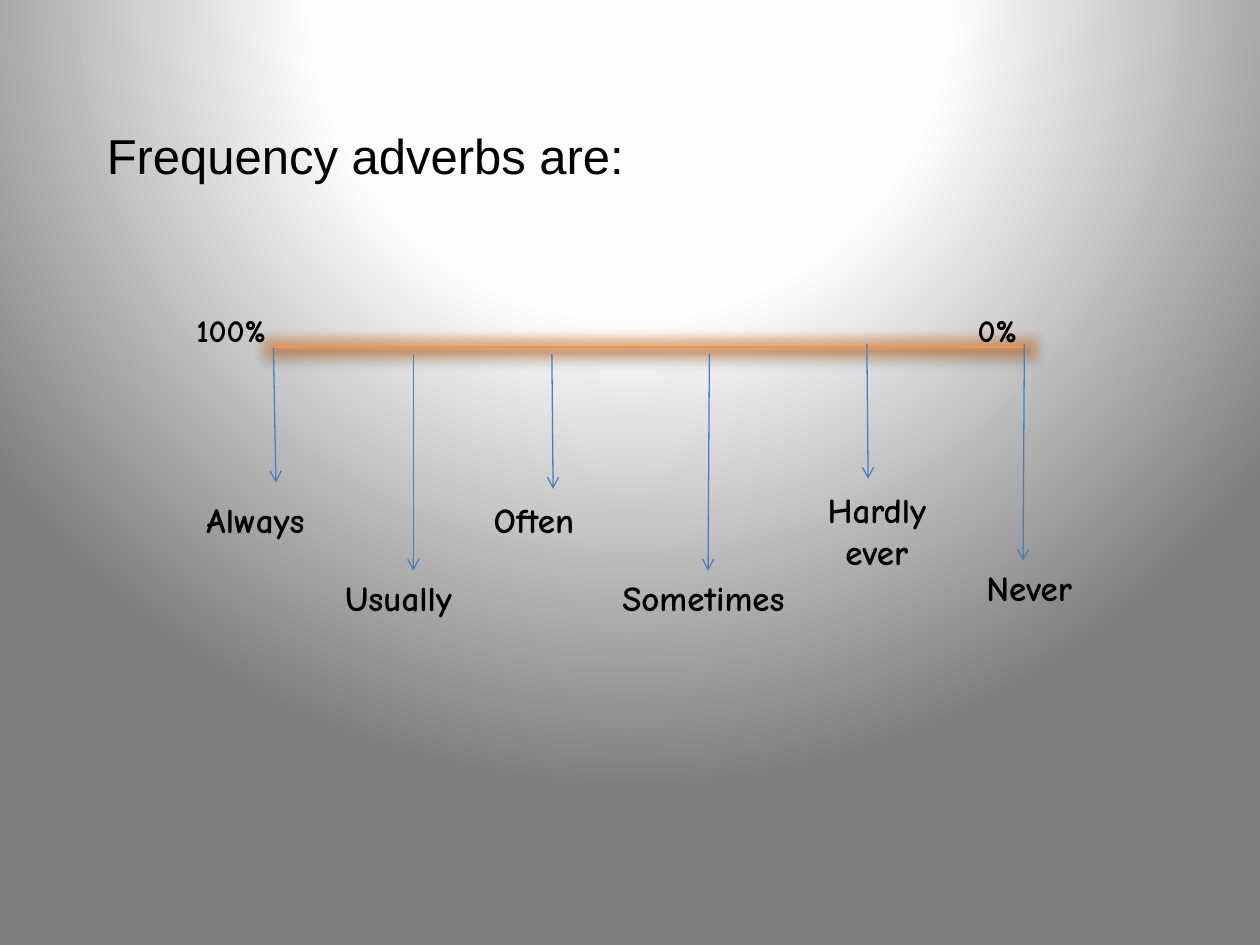
import pptx
import pptx.dml.color
import pptx.enum.shapes
import pptx.enum.text
import pptx.oxml
import pptx.oxml.ns
import pptx.util
from lxml import etree

Inches, Pt = pptx.util.Inches, pptx.util.Pt
RGBColor = pptx.dml.color.RGBColor
SHAPE = pptx.enum.shapes.MSO_SHAPE
ALIGN = pptx.enum.text.PP_ALIGN
qn = pptx.oxml.ns.qn

BLACK = RGBColor(0x00, 0x00, 0x00)
BLUE = RGBColor(0x4B, 0x7E, 0xBC)
ORANGE = RGBColor(0xF6, 0x92, 0x40)
GLOW = RGBColor(0xF0, 0x7A, 0x20)
BACK = [(0, RGBColor(0xFF, 0xFF, 0xFF)), (40, RGBColor(0xFE, 0xFE, 0xFE)),
        (100, RGBColor(0x7F, 0x7F, 0x7F))]
BAR = [(0, RGBColor(0xCC, 0x6E, 0x20)), (80, RGBColor(0xFF, 0x90, 0x34)),
       (100, RGBColor(0xFF, 0x91, 0x36))]

SHORT, LONG = 1.07, 1.72
# word, arrow x, arrow y, length, lean, label x, label y, label width, height
ADVERBS = [
    ("Always", 1.08, 0.34, SHORT, 0.02, 0.45, 1.49, 1.25, 0.44),
    ("Usually", 2.19, 0.39, LONG, 0, 1.55, 2.11, 1.24, 0.44),
    ("Often", 3.29, 0.39, SHORT, 0.01, 2.73, 1.49, 1.17, 0.44),
    ("Sometimes", 4.54, 0.39, LONG, -0.01, 3.75, 2.11, 1.65, 0.44),
    ("Hardly ever", 5.79, 0.31, SHORT, 0.01, 5.17, 1.41, 1.4, 0.77),
    ("Never", 7.04, 0.31, LONG, -0.01, 6.64, 2.03, 1.05, 0.44),
]


def add_node(parent, tag, **attrs):
    return etree.SubElement(parent, qn(tag), {k: str(v) for k, v in attrs.items()})


def make_grad(stops):
    """Return a gradFill element that still lacks its direction."""
    grad = pptx.oxml.parse_xml(
        f'<a:gradFill {pptx.oxml.ns.nsdecls("a")} rotWithShape="1"/>')
    gs_list = add_node(grad, "a:gsLst")
    for pos, color in stops:
        stop = add_node(gs_list, "a:gs", pos=pos * 1000)
        add_node(stop, "a:srgbClr", val=color)
    return grad


def add_back(slide):
    grad = make_grad(BACK)
    shade = add_node(grad, "a:path", path="circle")
    add_node(shade, "a:fillToRect", l=50000, t=-80000, r=50000, b=180000)
    back = pptx.oxml.parse_xml(f'<p:bg {pptx.oxml.ns.nsdecls("p", "a")}><p:bgPr/></p:bg>')
    back[0].append(grad)
    add_node(back[0], "a:effectLst")
    slide.element.cSld.insert(0, back)


def add_label(slide, text, left, top, width, height, size=20,
              font="Comic Neue", bold=True, align=None):
    box = slide.shapes.add_textbox(Inches(left), Inches(top), Inches(width), Inches(height))
    frame = box.text_frame
    frame.word_wrap = True
    frame.text = text
    para = frame.paragraphs[0]
    para.alignment = align
    style = para.runs[0].font
    style.name, style.size, style.bold = font, Pt(size), bold
    style.color.rgb = BLACK
    return frame


def add_title(slide, left, top, width, height):
    frame = add_label(slide, "Frequency adverbs are:", left, top, width, height,
                      size=28, font="Arial", bold=False)
    frame.vertical_anchor = pptx.enum.text.MSO_ANCHOR.BOTTOM


def add_bar(slide, left, top, width, height):
    bar = slide.shapes.add_shape(SHAPE.MATH_MINUS, Inches(left), Inches(top),
                                 Inches(width), Inches(height))
    bar.line.color.rgb = ORANGE
    bar.line.width = Pt(0.75)
    grad = make_grad(BAR)
    add_node(grad, "a:lin", ang=270 * 60000, scaled=0)
    props = bar.element.spPr
    props.find(qn("a:prstGeom")).addnext(grad)
    bar.shadow.inherit = False
    effects = props.find(qn("a:effectLst"))
    glow = add_node(effects, "a:glow", rad=Pt(11))
    shade = add_node(effects, "a:outerShdw", blurRad=Pt(3.1), dist=Pt(2),
                     dir=90 * 60000, rotWithShape=0)
    for effect, color, alpha in ((glow, GLOW, 40), (shade, BLACK, 38)):
        tint = add_node(effect, "a:srgbClr", val=color)
        add_node(tint, "a:alpha", val=alpha * 1000)


def add_arrow(slide, left, top, length, lean):
    arrow = slide.shapes.add_connector(
        pptx.enum.shapes.MSO_CONNECTOR.STRAIGHT, Inches(left), Inches(top),
        Inches(left + lean), Inches(top + length))
    arrow.line.color.rgb = BLUE
    arrow.line.width = Pt(0.75)
    add_node(arrow.line._get_or_add_ln(), "a:tailEnd", type="arrow")
    add_node(arrow.element.spPr, "a:effectLst")


def add_scale(slide, left, top, width):
    """Draw the bar from 100% to 0% with an arrow and a word per adverb."""
    add_bar(slide, left, top + 0.31, width, 0.05)
    for _, x, y, length, lean, *_ in ADVERBS:
        add_arrow(slide, left + x, top + y, length, lean)
    add_label(slide, "100%", left + 0.37, top, 1.2, 0.4, size=18)
    add_label(slide, "0%", left + 6.57, top, 0.62, 0.4, size=18)
    for word, *_, x, y, wide, high in ADVERBS:
        align = ALIGN.CENTER if " " in word else None
        add_label(slide, word, left + x, top + y, wide, high, align=align)


def main():
    deck = pptx.Presentation()
    deck.slide_width, deck.slide_height = Inches(10), Inches(7.5)
    slide = deck.slides.add_slide(deck.slide_layouts[6])
    add_back(slide)
    add_title(slide, 0.75, 0.52, 8.5, 0.99)
    add_scale(slide, 1.09, 2.42, 8.12)
    deck.save("out.pptx")


if __name__ == "__main__":
    main()
